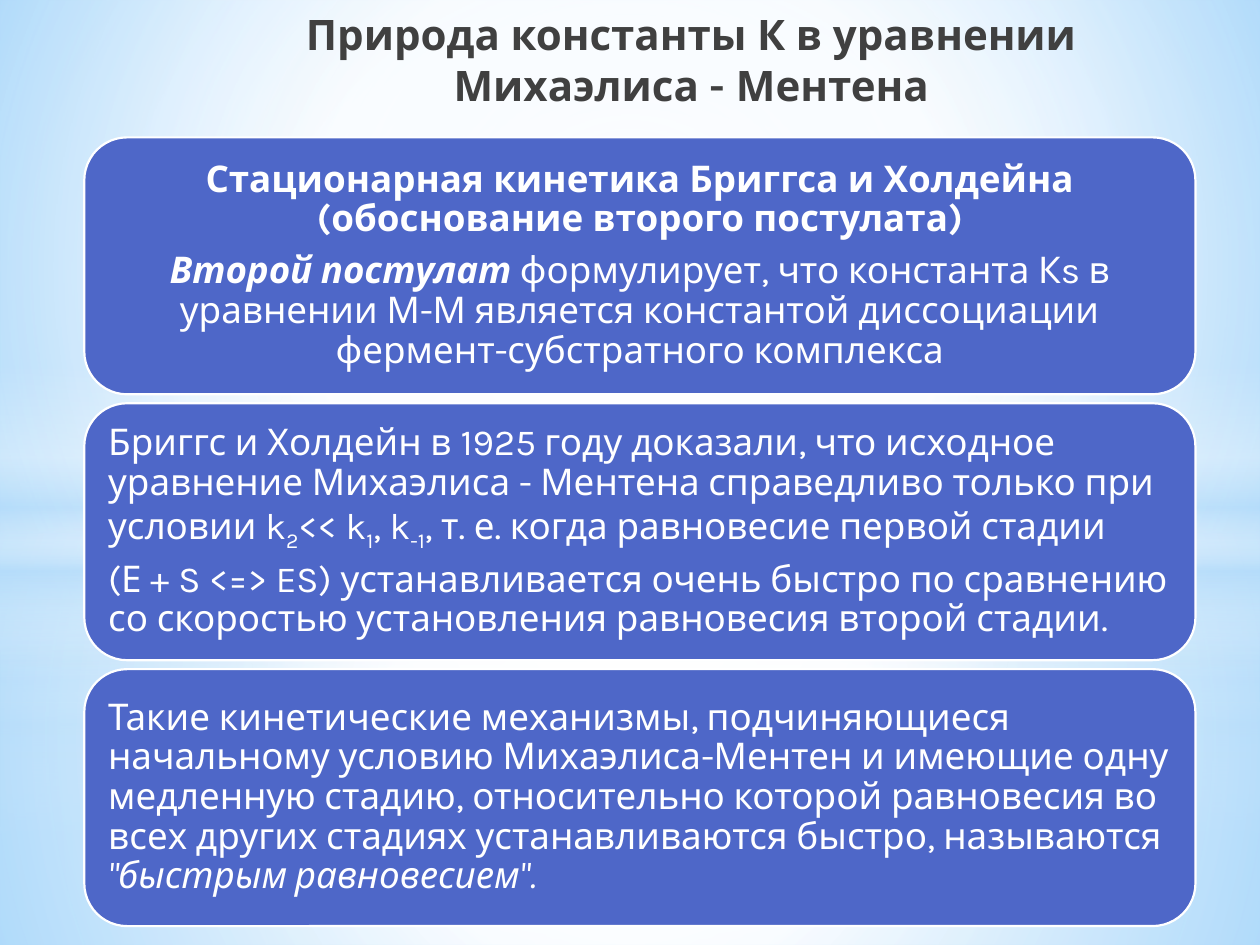
from lxml.etree import SubElement
from pptx import Presentation
from pptx.dml.color import RGBColor
from pptx.enum.shapes import MSO_SHAPE as SHAPE
from pptx.enum.text import MSO_ANCHOR as ANCHOR, MSO_AUTO_SIZE as AUTO, PP_ALIGN as ALIGN
from pptx.oxml.ns import qn
from pptx.util import Cm, Pt

FONT = "Karla"
WIDTH, HEIGHT = 25.4, 19.05
COLORS = {"title": "404040", "card": "4E67C8", "white": "FFFFFF",
          "haze": "B4DCFA", "sky": "9ED5FF", "deep": "5BB9FF"}
CENTER = (50, 50, 50, 50)

# Runs are (text, styles): b bold, i italic, s subscript
CARDS = [
    (ALIGN.CENTER, [
        [("Стационарная кинетика Бриггса и Холдейна (обоснование второго постулата)", "b")],
        [("Второй постулат ", "bi"),
         ("формулирует, что константа Кs в уравнении М-М является константой "
          "диссоциации фермент-субстратного комплекса", "")],
    ]),
    (ALIGN.LEFT, [
        [("Бриггс и Холдейн в 1925 году доказали, что исходное уравнение "
          "Михаэлиса - Ментена справедливо только при условии k", ""),
         ("2", "s"), ("<< k", ""), ("1", "s"), (", k", ""), ("-1", "s"),
         (", т. е. когда равновесие первой стадии", "")],
        [("(Е + S <=> ES) устанавливается очень быстро по сравнению со скоростью "
          "установления равновесия второй стадии.", "")],
    ]),
    (ALIGN.LEFT, [
        [("Такие кинетические механизмы, подчиняющиеся начальному условию "
          "Михаэлиса-Ментен и имеющие одну медленную стадию, относительно которой "
          "равновесия во всех других стадиях устанавливаются быстро, называются ", ""),
         ("\"быстрым равновесием\".", "i")],
    ]),
]


def rgb(name):
    return RGBColor.from_string(COLORS[name])


def set_gradient(props, stops, focus=None):
    """Replace the solid fill in props by (position, colour, opacity) stops.

    The gradient is circular around focus (left, top, right, bottom in percent),
    or vertical without one.
    """
    solid = props.find(qn("a:solidFill"))
    grad = props.makeelement(qn("a:gradFill"), {"rotWithShape": "1"})
    props.replace(solid, grad)
    stop_list = SubElement(grad, qn("a:gsLst"))
    for pos, color, opacity in stops:
        gs = SubElement(stop_list, qn("a:gs"), pos=str(pos * 1000))
        clr = SubElement(gs, qn("a:srgbClr"), val=COLORS[color])
        if opacity < 100:
            SubElement(clr, qn("a:alpha"), val=str(opacity * 1000))
    if focus:
        circle = SubElement(grad, qn("a:path"), {"path": "circle"})
        SubElement(circle, qn("a:fillToRect"),
                   {side: str(v * 1000) for side, v in zip("ltrb", focus)})
    else:
        SubElement(grad, qn("a:lin"), ang="5400000", scaled="0")


def add_glow(s, kind, top, height, stops, focus=CENTER):
    sp = s.shapes.add_shape(kind, 0, Cm(top), Cm(WIDTH), Cm(height))
    sp.shadow.inherit = False
    sp.fill.solid()
    sp.line.fill.background()
    set_gradient(sp.element.spPr, stops, focus)


def add_glow_layer(s, horizon, band_top, extra, fade):
    """Lower and upper haze meeting at the horizon, a light band and an ellipse."""
    def haze(first, middle, pos):
        return [(0, "white", first), (pos, "white", middle), (100, "haze", 79 + extra)]

    band = [(0, "white", 0), (29, "white", 30), (45, "haze", 40),
            (55, "white", 26), (65, "haze", 60), (100, "white", 0)]
    add_glow(s, SHAPE.RECTANGLE, horizon, HEIGHT - horizon, haze(91 + extra, 76 + extra, 37))
    add_glow(s, SHAPE.RECTANGLE, 0, horizon, haze(89 + extra, 62 + extra, 48))
    add_glow(s, SHAPE.RECTANGLE, band_top, 6.35, band, None)
    add_glow(s, SHAPE.OVAL, 4.45, 14.17, [(0, "white", 100), (fade, "white", 0)])


def add_backdrop(s):
    s.background.fill.solid()
    set_gradient(s.element.find(".//" + qn("p:bgPr")),
                 [(0, "sky", 100), (60, "white", 100), (100, "deep", 100)],
                 (20, 10, 20, 60))
    add_glow_layer(s, horizon=14.17, band_top=10.46, extra=0, fade=56)
    add_glow_layer(s, horizon=10.74, band_top=7.37, extra=1, fade=54)


def add_run(p, text, size, color, styles=""):
    r = p.add_run()
    r.text = text
    r.font.name = FONT
    r.font.size = Pt(size)
    r.font.color.rgb = rgb(color)
    r.font.bold = "b" in styles
    r.font.italic = "i" in styles
    if "s" in styles:
        r.font._element.set("baseline", "-25000")


def set_title(s, text):
    title = s.shapes.title
    title.left, title.top, title.width, title.height = Cm(5.64), Cm(0.33), Cm(16.59), Cm(2.01)
    tf = title.text_frame
    tf.auto_size = AUTO.NONE
    tf.word_wrap = True
    tf.vertical_anchor = ANCHOR.BOTTOM
    p = tf.paragraphs[0]
    p.alignment = ALIGN.CENTER
    add_run(p, text, 24, "title", "b")
    # Bring the title in front of the backdrop
    title.element.getparent().append(title.element)


def add_card(s, top, align, paragraphs):
    sp = s.shapes.add_shape(SHAPE.ROUNDED_RECTANGLE, Cm(1.7), Cm(top), Cm(22.4), Cm(5.18))
    sp.shadow.inherit = False
    sp.fill.solid()
    sp.fill.fore_color.rgb = rgb("card")
    sp.line.color.rgb = rgb("white")
    sp.line.width = Pt(1.25)
    tf = sp.text_frame
    tf.word_wrap = True
    tf.vertical_anchor = ANCHOR.MIDDLE
    tf.margin_left = tf.margin_right = tf.margin_top = tf.margin_bottom = Cm(0.23)
    for n, runs in enumerate(paragraphs):
        p = tf.add_paragraph() if n else tf.paragraphs[0]
        p.alignment = align
        p.line_spacing = 0.9
        p.space_after = Pt(7)
        for text, styles in runs:
            add_run(p, text, 21, "white", styles)


def main():
    prs = Presentation()
    prs.slide_width, prs.slide_height = Cm(WIDTH), Cm(HEIGHT)
    s = prs.slides.add_slide(prs.slide_layouts[5])
    add_backdrop(s)
    set_title(s, "Природа константы К в уравнении Михаэлиса - Ментена")
    for n, (align, paragraphs) in enumerate(CARDS):
        add_card(s, 2.77 + n * 5.36, align, paragraphs)
    prs.save("out.pptx")


if __name__ == "__main__":
    main()
